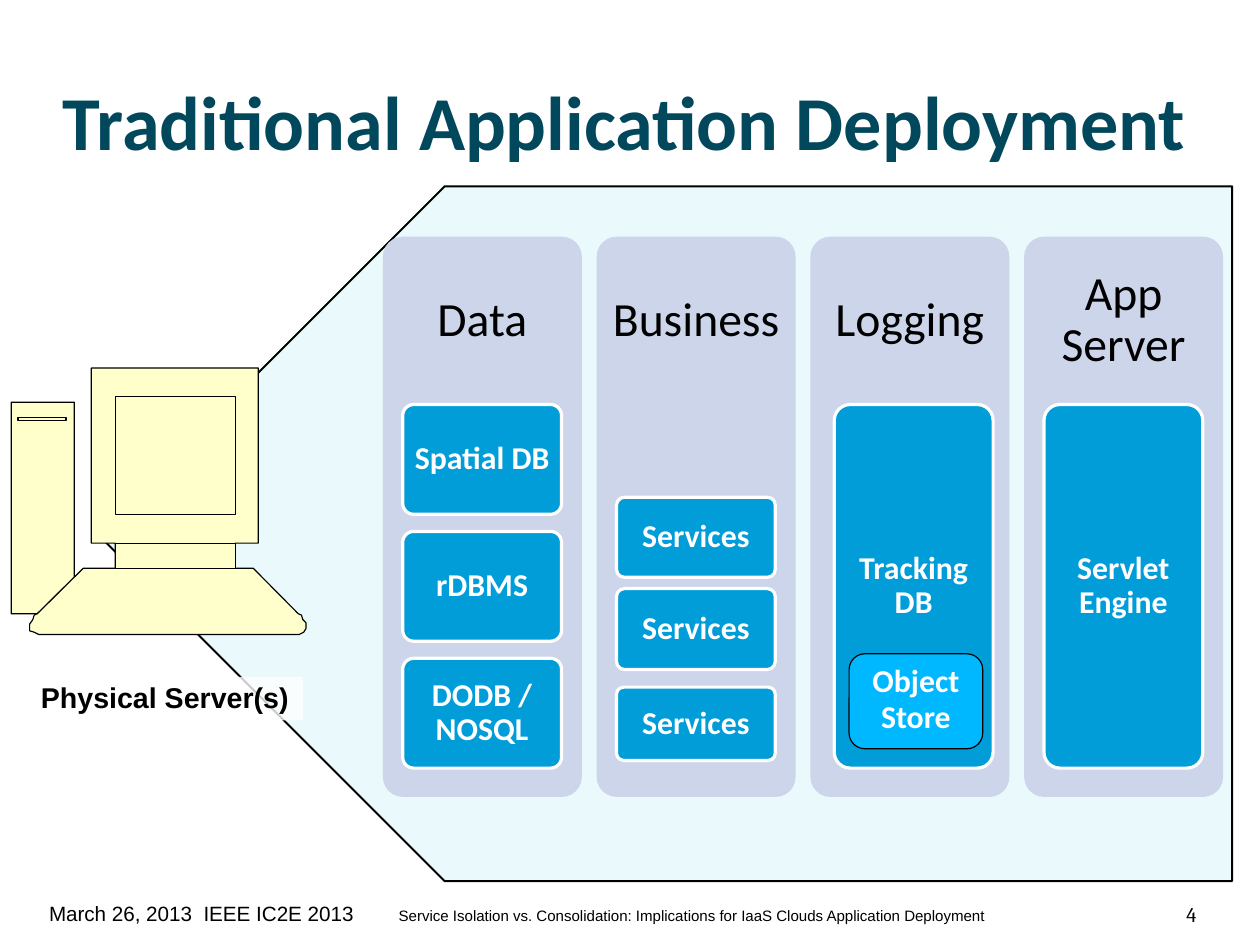
from lxml import etree
from pptx import Presentation
from pptx.dml.color import RGBColor
from pptx.enum.shapes import MSO_SHAPE
from pptx.enum.text import MSO_ANCHOR, MSO_AUTO_SIZE, PP_ALIGN
from pptx.oxml.ns import qn
from pptx.util import Cm, Pt

RECT, ROUND = MSO_SHAPE.RECTANGLE, MSO_SHAPE.ROUNDED_RECTANGLE
PENTAGON = MSO_SHAPE.PENTAGON
TOP, MIDDLE = MSO_ANCHOR.TOP, MSO_ANCHOR.MIDDLE
LEFT, CENTER, RIGHT = PP_ALIGN.LEFT, PP_ALIGN.CENTER, PP_ALIGN.RIGHT

COLORS = {
    "title": "02485C", "ink": "000000", "white": "FFFFFF", "zone": "DBF5F9",
    "tier": "CCD5EA", "component": "009DD9", "store": "00B8FF", "computer": "FFFFCC",
}
PLAIN, SHAPE_INSETS = (0, 0, 0, 0), (0.25, 0.13, 0.25, 0.13)
ITEM_INSETS = (0.15, 0.1, 0.15, 0.1)
TIER_WIDTH, TIER_PITCH, HEADER_HEIGHT, ITEM_WIDTH = 4.42, 4.75, 3.73, 3.53

# Each tier: name, left margin of its components, (name, top in tier, height)
TIERS = [
    ("Data", 0.44, [(name, HEADER_HEIGHT + 2.82 * row, 2.44)
                    for row, name in enumerate(("Spatial DB", "rDBMS", "DODB / NOSQL"))]),
    ("Business", 0.44, [("Services", top, height)
                        for top, height in ((5.79, 1.78), (7.82, 1.8), (10.01, 1.63))]),
    ("Logging", 0.53, [("Tracking DB", HEADER_HEIGHT, 8.08)]),
    ("App Server", 0.44, [("Servlet Engine", HEADER_HEIGHT, 8.08)]),
]

TOWER = [(0, 0.76), (1.4, 0.76), (1.4, 4.65), (0.58, 5.46), (0, 5.46)]
MONITOR_AND_BASE = [
    (1.6, 4.45), (2.31, 4.45), (2.31, 3.89), (1.78, 3.89), (1.78, 0), (5.49, 0),
    (5.49, 3.89), (4.98, 3.89), (4.98, 4.45), (5.38, 4.45), (6.38, 5.46),
    (6.45, 5.49), (6.48, 5.59), (6.55, 5.66), (6.55, 5.79), (6.5, 5.87),
    (6.4, 5.92), (0.61, 5.92), (0.51, 5.87), (0.41, 5.84), (0.41, 5.69),
    (0.48, 5.59), (0.51, 5.49), (0.58, 5.46),
]
SCREEN, SLOT, STAND = (2.31, 0.64, 2.67, 2.62), (0.15, 1.09, 1.07, 0.08), (2.31, 3.89, 2.67, 0.56)


def color(name):
    return RGBColor.from_string(COLORS[name])


def paint(shape, fill, line=None, width=0.75, opacity=None):
    shape.shadow.inherit = False
    shape.fill.solid()
    shape.fill.fore_color.rgb = color(fill)
    if opacity:
        tint = shape.fill._xPr.find(qn("a:solidFill"))[0]
        etree.SubElement(tint, qn("a:alpha")).set("val", str(opacity * 1000))
    if line:
        shape.line.color.rgb = color(line)
        shape.line.width = Pt(width)
    else:
        shape.line.fill.background()


def add_box(parent, kind, box, fill, line=None, width=0.75, opacity=None, corner=None):
    shape = parent.shapes.add_shape(kind, *map(Cm, box))
    paint(shape, fill, line, width, opacity)
    if corner:
        shape.adjustments[0] = corner
    return shape


def write(shape, spans, font, ink="ink", bold=False, align=LEFT, anchor=MIDDLE,
          insets=PLAIN, spacing=None):
    """Fill the shape's one paragraph with (text, size) spans and return it."""
    frame = shape.text_frame
    frame.word_wrap = True
    frame.vertical_anchor = anchor
    (frame.margin_left, frame.margin_top,
     frame.margin_right, frame.margin_bottom) = map(Cm, insets)
    para = frame.paragraphs[0]
    para.alignment = align
    if spacing:
        para.line_spacing = spacing
    for text, size in spans:
        span = para.add_run()
        span.text = text
        span.font.name = font
        span.font.size = Pt(size)
        span.font.bold = bold
        span.font.color.rgb = color(ink)
    return para


def add_text(page, box, spans, font, **style):
    return write(page.shapes.add_textbox(*map(Cm, box)), spans, font, **style)


def draw_footer(page, left, top, width, height):
    para = add_text(page, (left, top, width, height), [
        ("March 26, 2013  IEEE IC2E 2013", 13), ("\t", 13),
        ("Service Isolation vs. Consolidation: Implications for IaaS Clouds "
         "Application Deployment", 9.5)], "Arial", spacing=0.93)
    tabs = etree.SubElement(para._p.get_or_add_pPr(), qn("a:tabLst"))
    stop = etree.SubElement(tabs, qn("a:tab"))
    stop.set("pos", str(Cm(7.77)))
    stop.set("algn", "l")
    add_text(page, (left + width - 0.21, top, 0.94, height), [("4", 13)], "Cambria", align=RIGHT)


def draw_tier(page, left, top, height, name, margin, components):
    add_box(page, ROUND, (left, top, TIER_WIDTH, height), "tier", corner=0.1)
    add_text(page, (left, top, TIER_WIDTH, HEADER_HEIGHT), [(name, 30)], "Calibri",
             align=CENTER, insets=(0.3, 0.3, 0.3, 0.3), spacing=0.9)
    for label, offset, item_height in components:
        item = add_box(page, ROUND, (left + margin, top + offset, ITEM_WIDTH, item_height),
                       "component", "white", 2, corner=0.1)
        write(item, [(label, 20)], "Calibri", ink="white", bold=True, align=CENTER,
              insets=ITEM_INSETS, spacing=0.9)


def draw_tiers(page, left, top, height):
    for index, tier in enumerate(TIERS):
        draw_tier(page, left + index * TIER_PITCH, top, height, *tier)
    store = add_box(page, ROUND, (left + 10.36, top + 9.27, 2.97, 2.11), "store", "ink")
    write(store, [("Object Store", 20)], "Calibri", ink="white", bold=True, align=CENTER,
          anchor=TOP, insets=SHAPE_INSETS, spacing=0.93)


def draw_computer(page, left, top):
    computer = page.shapes.add_group_shape()
    for outline in (TOWER, MONITOR_AND_BASE):
        points = [(Cm(left + x), Cm(top + y)) for x, y in outline]
        builder = computer.shapes.build_freeform(*points[0])
        builder.add_line_segments(points[1:], close=True)
        paint(builder.convert_to_shape(), "computer", "ink")
    for x, y, width, height in (SCREEN, SLOT, STAND):
        add_box(computer, RECT, (left + x, top + y, width, height), "computer", "ink")


def draw_server_label(page, box):
    label = add_box(page, RECT, box, "white", opacity=79)
    write(label, [("Physical Server(s)", 18)], "Arial", bold=True, anchor=TOP,
          insets=SHAPE_INSETS, spacing=0.93)
    label.text_frame.word_wrap = False
    label.text_frame.auto_size = MSO_AUTO_SIZE.SHAPE_TO_FIT_TEXT


def main():
    deck = Presentation()
    deck.slide_width, deck.slide_height = Cm(28), Cm(21)
    page = deck.slides.add_slide(deck.slide_layouts[6])
    draw_footer(page, 1.09, 19.76, 24.77, 1.12)
    zone = add_box(page, PENTAGON, (2.16, 4.14, 25.22, 15.44), "zone", "ink", 1.25, opacity=57)
    zone.rotation = 180
    add_text(page, (1.4, -0.23, 25.2, 5.66), [("Traditional Application Deployment", 48)],
             "Calibri", ink="title", bold=True, insets=(0, 0.15, 0, 0))
    draw_tiers(page, 8.51, 5.26, 12.45)
    draw_computer(page, 0.25, 8.18)
    draw_server_label(page, (0.66, 15.04, 6.07, 0.97))
    deck.save("out.pptx")


if __name__ == "__main__":
    main()
